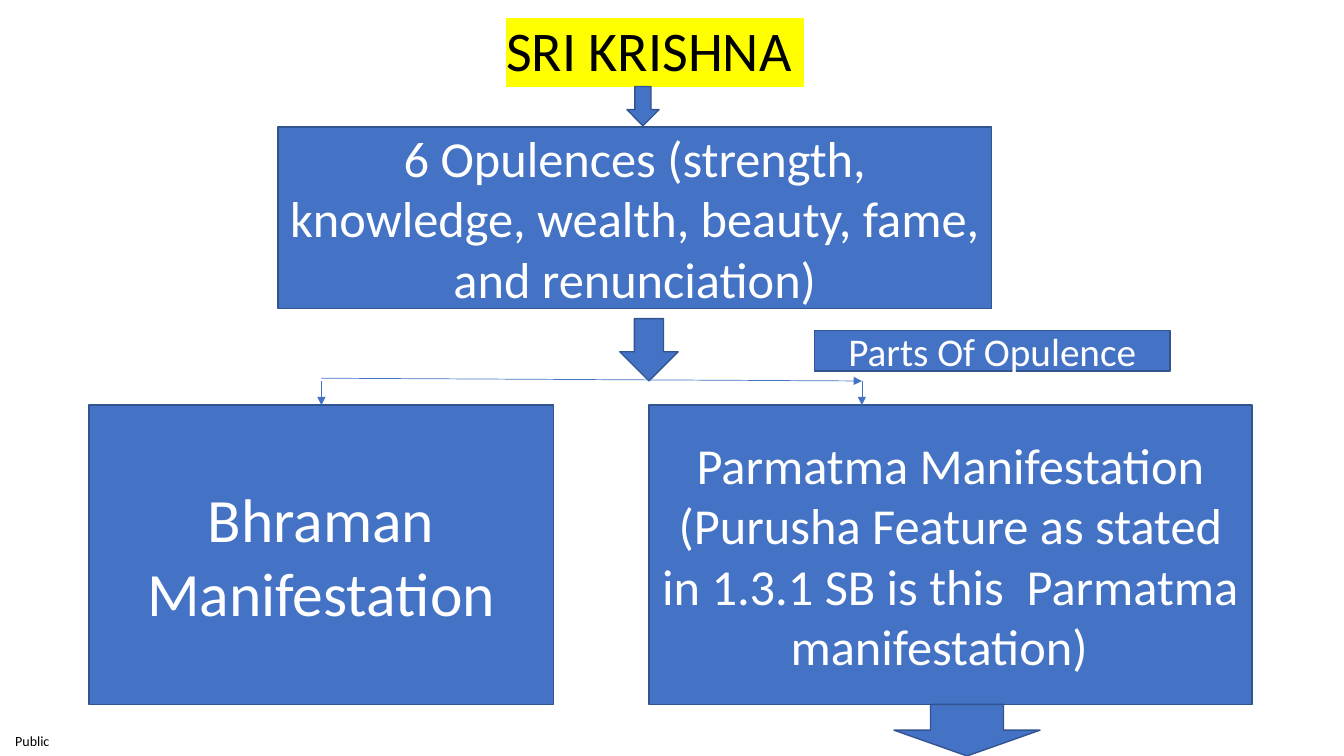
"""Builds the slide on the manifestations of Sri Krishna."""
from dataclasses import dataclass

from lxml.etree import SubElement
from pptx import Presentation
from pptx.dml.color import RGBColor
from pptx.enum.shapes import MSO_CONNECTOR, MSO_SHAPE
from pptx.enum.text import MSO_ANCHOR, MSO_AUTO_SIZE, PP_ALIGN
from pptx.oxml.ns import qn
from pptx.util import Cm, Pt


@dataclass(frozen=True)
class Theme:
    font: str = "Calibri"
    fill: str = "4472C4"
    outline: str = "325491"
    light: str = "FFFFFF"
    dark: str = "000000"
    mark: str = "FFFF00"
    label: int = 10
    note: int = 28
    text: int = 36
    heading: int = 40
    large: int = 44


class Diagram:
    def __init__(self, slide, theme):
        self.slide = slide
        self.theme = theme

    def run(self, p, text, size, color):
        r = p.add_run()
        r.text = text
        r.font.name = self.theme.font
        r.font.size = Pt(size)
        r.font.color.rgb = RGBColor.from_string(color)
        return r

    def heading(self, text, left, top, width, height, indent):
        self.slide.shapes.title.element.getparent().remove(self.slide.shapes.title.element)
        sp = self.slide.placeholders[1]
        sp.left, sp.top, sp.width, sp.height = map(Cm, (left, top, width, height))
        tf = sp.text_frame
        tf.auto_size = MSO_AUTO_SIZE.NONE
        p = tf.paragraphs[0]
        p.level = 8
        p.line_spacing = 0.9
        p.space_before = Pt(5)
        pPr = p._p.get_or_add_pPr()
        pPr.set("marL", str(Cm(indent)))
        pPr.set("indent", "0")
        SubElement(pPr, qn("a:buNone"))
        r = self.run(p, text, self.theme.heading, self.theme.dark)
        highlight = r._r.makeelement(qn("a:highlight"))
        SubElement(highlight, qn("a:srgbClr")).set("val", self.theme.mark)
        r.font.fill._xPr.find(qn("a:solidFill")).addnext(highlight)

    def shape(self, kind, left, top, width, height):
        sp = self.slide.shapes.add_shape(kind, *map(Cm, (left, top, width, height)))
        sp.shadow.inherit = False
        sp.fill.solid()
        sp.fill.fore_color.rgb = RGBColor.from_string(self.theme.fill)
        sp.line.color.rgb = RGBColor.from_string(self.theme.outline)
        sp.line.width = Pt(1)
        return sp

    def box(self, text, size, *place):
        tf = self.shape(MSO_SHAPE.RECTANGLE, *place).text_frame
        tf.word_wrap = True
        tf.vertical_anchor = MSO_ANCHOR.MIDDLE
        p = tf.paragraphs[0]
        p.alignment = PP_ALIGN.CENTER
        self.run(p, text, size, self.theme.light)

    def down_arrow(self, *place):
        self.shape(MSO_SHAPE.DOWN_ARROW, *place)

    def line(self, *ends):
        cxn = self.slide.shapes.add_connector(MSO_CONNECTOR.STRAIGHT, *map(Cm, ends))
        cxn.line.color.rgb = RGBColor.from_string(self.theme.fill)
        cxn.line.width = Pt(0.5)
        SubElement(cxn.line._get_or_add_ln(), qn("a:tailEnd")).set("type", "triangle")
        SubElement(cxn._element.spPr, qn("a:effectLst"))

    def label(self, text, *place):
        tf = self.slide.shapes.add_textbox(*map(Cm, place)).text_frame
        tf.word_wrap = True
        tf.vertical_anchor = MSO_ANCHOR.MIDDLE
        tf.margin_left = tf.margin_right = tf.margin_top = tf.margin_bottom = 0
        p = tf.paragraphs[0]
        p.alignment = PP_ALIGN.CENTER
        self.run(p, text, self.theme.label, self.theme.dark)


def main():
    prs = Presentation()
    prs.slide_width, prs.slide_height = Cm(33.87), Cm(19.05)
    theme = Theme()
    d = Diagram(prs.slides.add_slide(prs.slide_layouts[1]), theme)
    row_top, row_height = 10.21, 7.54
    bar_top, bar_left, bar_right = 9.6, 8.1, 21.72

    d.label("Public", 0, 18.31, 1.63, 0.74)
    d.heading("SRI KRISHNA ", 2.34, 0.46, 29.21, 16.71, indent=10.16)
    d.down_arrow(15.8, 2.18, 0.81, 0.99)
    d.box("6 Opulences (strength, knowledge, wealth, beauty, fame, and renunciation)",
          theme.text, 7.01, 3.2, 17.98, 4.57)
    d.down_arrow(15.62, 8.03, 1.47, 1.57)
    d.box("Bhraman Manifestation", theme.large, 2.24, row_top, 11.71, row_height)
    d.box("Parmatma Manifestation (Purusha Feature as stated in 1.3.1 SB is this  "
          "Parmatma manifestation)  ", theme.text, 16.36, row_top, 15.19, row_height)
    d.box("Parts Of Opulence", theme.note, 20.52, 8.33, 8.97, 1.02)
    d.line(bar_left, 9.53, bar_right, bar_top)
    for x in (bar_right, bar_left):
        d.line(x, bar_top, x, row_top)
    d.down_arrow(22.53, row_top + row_height, 3.68, 1.3)
    prs.save("out.pptx")


if __name__ == "__main__":
    main()
